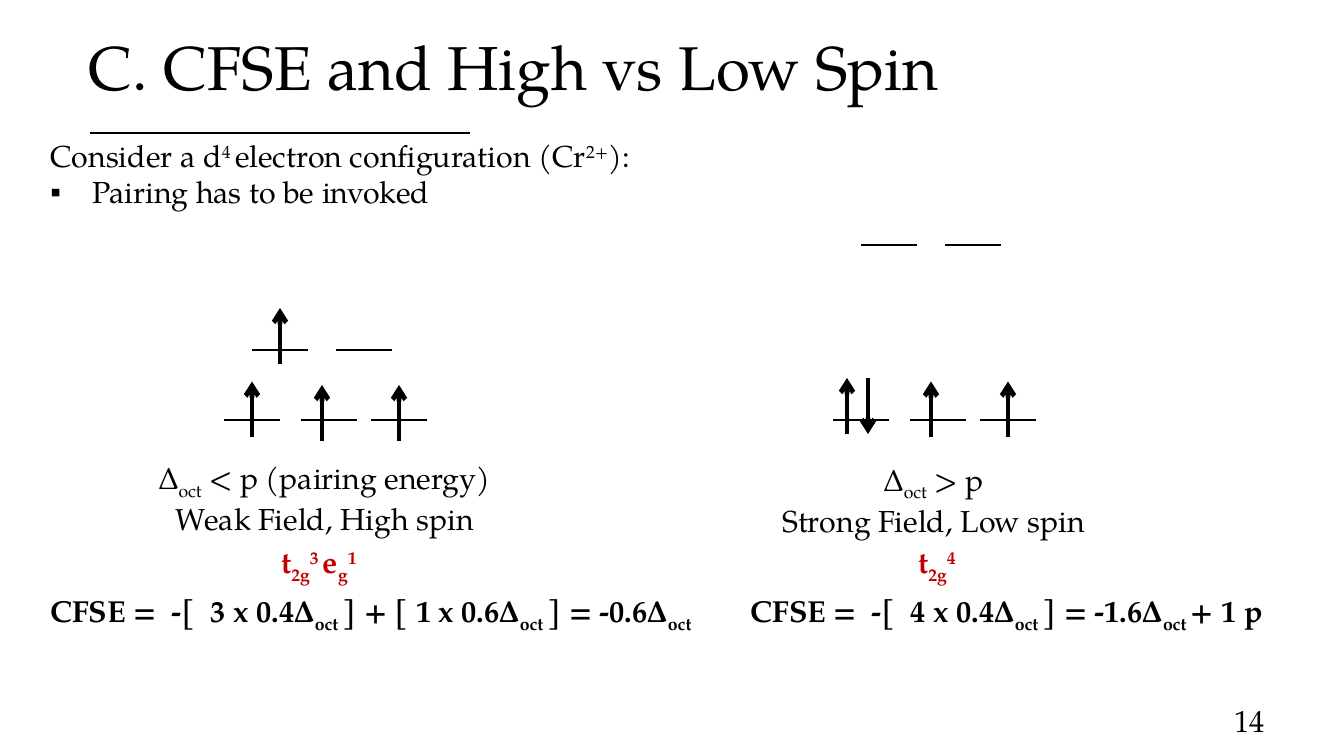
from lxml import etree
from pptx import Presentation
from pptx.dml.color import RGBColor
from pptx.enum.shapes import MSO_CONNECTOR
from pptx.enum.text import MSO_ANCHOR as Anchor, MSO_AUTO_SIZE as AutoSize, PP_ALIGN as Align
from pptx.oxml.ns import qn
from pptx.util import Pt

BLACK = RGBColor(0, 0, 0)
RED = RGBColor(0xC0, 0, 0)
FONT = "TeX Gyre Pagella"
SUB, SUPER = -25, 30
ORBITAL_WIDTH = ARROW_LENGTH = 48
OCT = ("oct", SUB)
OCT_SPACED = ("oct ", SUB)


def write_text(paragraph, pieces, size=26, color=BLACK, bold=False, align=Align.LEFT):
    """Pieces are plain strings or (text, baseline percent) pairs."""
    paragraph.alignment = align
    paragraph.space_before = Pt(0)
    for piece in pieces:
        text, baseline = (piece, 0) if isinstance(piece, str) else piece
        run = paragraph.add_run()
        run.text = text
        font = run.font
        font.name, font.size, font.bold = FONT, Pt(size), bold
        font.color.rgb = color
        if baseline:
            run._r.get_or_add_rPr().set("baseline", str(baseline * 1000))


def fill_frame(shape, lines, anchor=Anchor.TOP, margins=(7.2, 3.6),
               auto_size=AutoSize.SHAPE_TO_FIT_TEXT, **text_format):
    frame = shape.text_frame
    frame.word_wrap = True
    frame.auto_size = auto_size
    frame.vertical_anchor = anchor
    frame.margin_left = frame.margin_right = Pt(margins[0])
    frame.margin_top = frame.margin_bottom = Pt(margins[1])
    for index, pieces in enumerate(lines):
        paragraph = frame.add_paragraph() if index else frame.paragraphs[0]
        write_text(paragraph, pieces, **text_format)


def place(shape, left, top, width, height):
    shape.left, shape.top = Pt(left), Pt(top)
    shape.width, shape.height = Pt(width), Pt(height)


def add_text(slide, box, lines, **frame_format):
    shape = slide.shapes.add_textbox(*map(Pt, box))
    fill_frame(shape, lines, **frame_format)


def set_bullet(paragraph, character=None, indent=0):
    properties = paragraph._p.get_or_add_pPr()
    properties.set("marL", str(Pt(indent)))
    properties.set("indent", str(-Pt(indent)))
    if character:
        etree.SubElement(properties, qn("a:buChar")).set("char", character)
    else:
        etree.SubElement(properties, qn("a:buNone"))


def add_line(slide, start, end, width, arrow=False):
    line = slide.shapes.add_connector(MSO_CONNECTOR.STRAIGHT, *map(Pt, start + end))
    line.line.color.rgb = BLACK
    line.line.width = Pt(width)
    if arrow:
        etree.SubElement(line.line._get_or_add_ln(), qn("a:tailEnd")).set("type", "arrow")
    etree.SubElement(line._element.spPr, qn("a:effectLst"))


def add_orbital_diagram(slide, left, upper_level, electrons):
    """Electrons are (offset from left, tail y, direction), with up as -1."""
    lower_level = 360
    levels = [(0, lower_level), (66, lower_level), (126, lower_level),
              (24, upper_level), (96, upper_level)]
    for offset, y in levels:
        x = left + offset
        add_line(slide, (x, y), (x + ORBITAL_WIDTH, y), 2)
    for offset, tail, direction in electrons:
        x = left + offset
        add_line(slide, (x, tail), (x, tail + direction * ARROW_LENGTH), 4, arrow=True)


def main():
    presentation = Presentation()
    presentation.slide_width, presentation.slide_height = Pt(1152), Pt(648)
    slide = presentation.slides.add_slide(presentation.slide_layouts[1])
    title, body = slide.placeholders

    # Title, rule and slide number
    place(title, 66, 26, 1086, 60.5)
    fill_frame(title, [["C. CFSE and High vs Low Spin"]], anchor=Anchor.MIDDLE,
               margins=(10, 5), auto_size=AutoSize.NONE, size=53)
    add_line(slide, (77, 114), (403, 114), 1.5)
    add_text(slide, (826, 600.5, 268.5, 34.5), [["14"]], anchor=Anchor.MIDDLE,
             margins=(10, 5), auto_size=AutoSize.NONE, align=Align.RIGHT)

    # Introduction
    place(body, 36, 114, 1080, 101.5)
    fill_frame(body, [
        ["Consider a d", ("4 ", SUPER), "electron configuration (Cr", ("2+", SUPER), "):"],
        ["Pairing has to be invoked"],
    ])
    heading, point = body.text_frame.paragraphs
    set_bullet(heading)
    set_bullet(point, "▪", 36)

    # Orbitals: weak field on the left, strong field on the right
    up, down = -1, 1
    add_orbital_diagram(slide, 192, 300,
                        [(24, 375, up), (84, 378, up), (150, 378, up), (48, 312, up)])
    add_orbital_diagram(slide, 714, 210,
                        [(12, 372, up), (30, 324, down), (84, 375, up), (150, 375, up)])

    # Field strength
    add_text(slide, (66, 390, 425.5, 70.5),
             [["Δ", OCT, " < p (pairing energy)"], ["Weak Field, High spin"]],
             align=Align.CENTER)
    add_text(slide, (588, 391.5, 425.5, 70.5),
             [["Δ", OCT, " > p"], ["Strong Field, Low spin"]], align=Align.CENTER)

    # Electron configurations
    configurations = [
        (234, ["t", ("2g", SUB), ("3 ", SUPER), "e", ("g", SUB), ("1", SUPER)]),
        (780, ["t", ("2g", SUB), ("4", SUPER)]),
    ]
    for left, pieces in configurations:
        add_text(slide, (left, 462, 102, 101.5), [pieces], color=RED, bold=True)

    # Stabilization energies
    energies = [
        (36, 582, ["CFSE =  -[  3 x 0.4Δ", OCT_SPACED, "] + [ 1 x 0.6Δ", OCT_SPACED,
                   "] = -0.6Δ", OCT]),
        (636, 534, ["CFSE =  -[  4 x 0.4Δ", OCT_SPACED, "] = -1.6Δ", OCT_SPACED, "+ 1 p"]),
    ]
    for left, width, pieces in energies:
        add_text(slide, (left, 504, width, 39), [pieces], bold=True)

    presentation.save("out.pptx")


if __name__ == "__main__":
    main()
